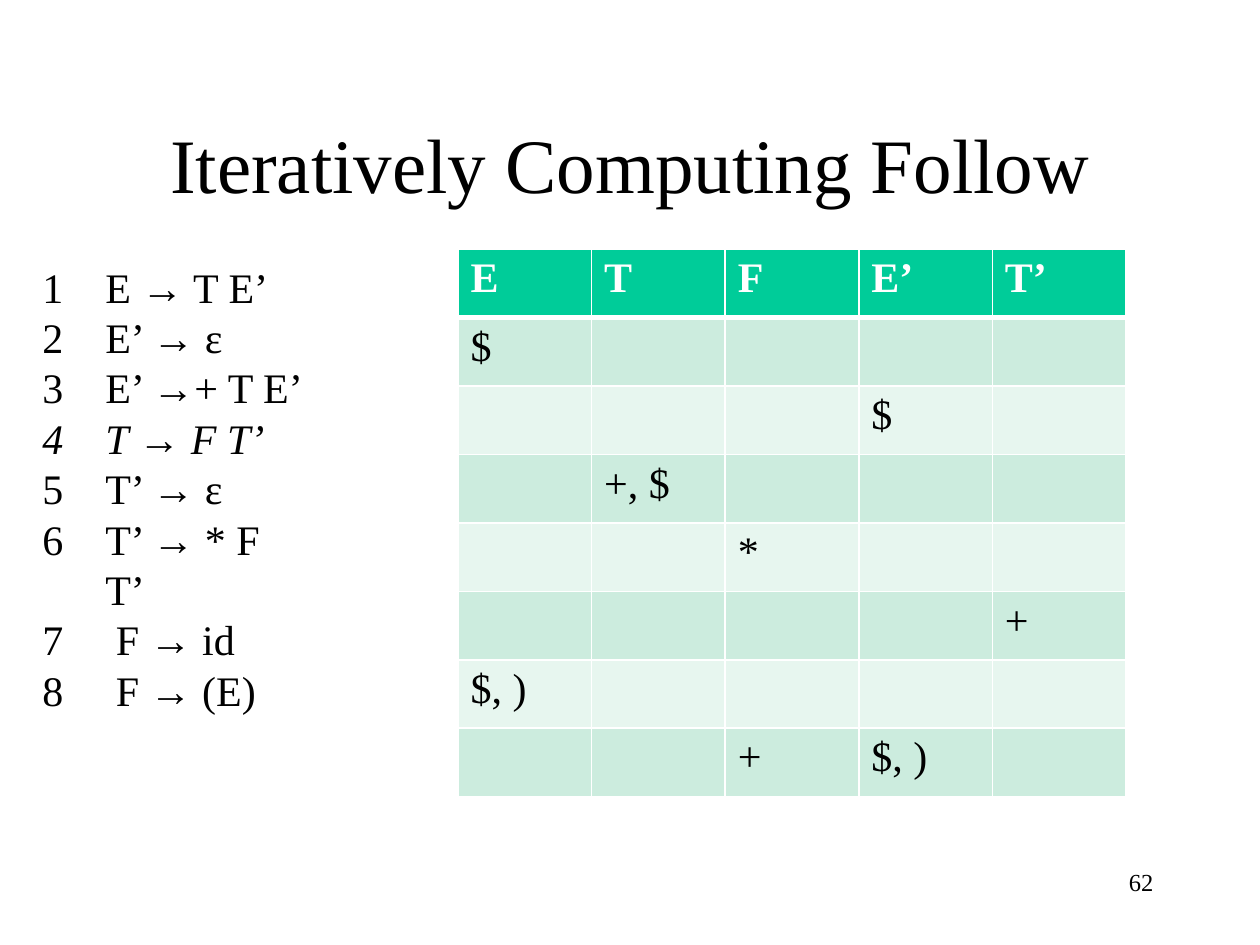
from dataclasses import dataclass

from lxml.etree import SubElement
from pptx import Presentation
from pptx.dml.color import RGBColor as Rgb
from pptx.enum.text import MSO_ANCHOR as Anchor, MSO_AUTO_SIZE as AutoSize, PP_ALIGN as Align
from pptx.oxml.ns import qn
from pptx.slide import Slide
from pptx.table import _Cell as Cell
from pptx.text.text import _Paragraph as Paragraph
from pptx.util import Emu, Pt

FONT = "Times New Roman"
COLORS = {"ink": "000000", "white": "FFFFFF", "header": "00CC99",
          "odd": "CCECDE", "even": "E7F6EF"}
SYMBOLS = ["E", "T", "F", "E’", "T’"]
STEPS = [{"E": "$"}, {"E’": "$"}, {"T": "+, $"}, {"F": "*"},
         {"T’": "+"}, {"E": "$, )"}, {"F": "+", "E’": "$, )"}]


@dataclass
class Box:
    left: int
    top: int
    width: int
    height: int


@dataclass
class Label:
    box: Box
    lines: list[str]
    size: int
    align: Align = Align.LEFT
    anchor: Anchor = Anchor.TOP


TITLE = Label(Box(95, 84, 1071, 158), ["Iteratively Computing Follow"], 44,
              Align.CENTER, Anchor.MIDDLE)
PAGE = Label(Box(903, 861, 263, 63), ["62"], 14, Align.RIGHT)
GRAMMAR = Label(Box(30, 255, 289, 420), [
    "E → T E’", "E’ → ε", "E’ →+ T E’", "T → F T’",
    "T’ → ε", "T’ → * F T’", " F → id", " F → (E)"], 24)
ITALIC_RULE = 3
FOLLOW = Box(458, 249, 668, 548)


def px(length: int) -> Emu:
    """Turn pixels into EMU."""
    return Emu(round(length * 914400 / 126))


def place(box: Box) -> tuple[Emu, Emu, Emu, Emu]:
    """Give the four lengths of a box in EMU."""
    return px(box.left), px(box.top), px(box.width), px(box.height)


def style(paragraph: Paragraph, size: int, color: str = "ink", bold: bool = False) -> None:
    """Format every run of a paragraph."""
    for run in paragraph.runs:
        run.font.name = FONT
        run.font.size = Pt(size)
        run.font.bold = bold
        run.font.color.rgb = Rgb.from_string(COLORS[color])


def draw_label(slide: Slide, label: Label) -> list[Paragraph]:
    """Draw a text box and return its paragraphs."""
    frame = slide.shapes.add_textbox(*place(label.box)).text_frame
    frame.word_wrap = True
    frame.auto_size = AutoSize.NONE
    frame.vertical_anchor = label.anchor
    frame.text = "\n".join(label.lines)
    for paragraph in frame.paragraphs:
        paragraph.alignment = label.align
        style(paragraph, label.size)
    return list(frame.paragraphs)


def number(paragraph: Paragraph) -> None:
    """Number a paragraph with a hanging indent."""
    properties = paragraph._p.get_or_add_pPr()
    properties.set("marL", str(px(63)))
    properties.set("indent", str(-px(63)))
    SubElement(properties, qn("a:buFontTx"))
    SubElement(properties, qn("a:buAutoNum"), type="arabicPlain")


def border(cell: Cell, row: int) -> None:
    """Rule a cell in white, heavier below the header."""
    widths = {"L": 1, "R": 1, "T": 3 if row == 1 else 1, "B": 3 if row == 0 else 1}
    properties = cell._tc.get_or_add_tcPr()
    for side, width in widths.items():
        line = SubElement(properties, qn(f"a:ln{side}"), w=str(Pt(width)))
        fill = SubElement(line, qn("a:solidFill"))
        SubElement(fill, qn("a:srgbClr"), val=COLORS["white"])


def draw_follow(slide: Slide, box: Box) -> None:
    """Draw the table of Follow sets, one step a row."""
    rows = [dict(zip(SYMBOLS, SYMBOLS)), *STEPS]
    table = slide.shapes.add_table(len(rows), len(SYMBOLS), *place(box)).table
    for r, entries in enumerate(rows):
        fill = "header" if r == 0 else "odd" if r % 2 else "even"
        for c, symbol in enumerate(SYMBOLS):
            cell = table.cell(r, c)
            border(cell, r)
            cell.fill.solid()
            cell.fill.fore_color.rgb = Rgb.from_string(COLORS[fill])
            if symbol in entries:
                cell.text_frame.text = entries[symbol]
                style(cell.text_frame.paragraphs[0], 24,
                      "ink" if r else "white", bold=r == 0)


def main() -> None:
    """Build and save the slide."""
    deck = Presentation()
    deck.slide_width, deck.slide_height = px(1260), px(945)
    slide = deck.slides.add_slide(deck.slide_layouts[6])
    draw_label(slide, TITLE)
    draw_label(slide, PAGE)
    rules = draw_label(slide, GRAMMAR)
    for rule in rules:
        number(rule)
    rules[ITALIC_RULE].runs[0].font.italic = True
    draw_follow(slide, FOLLOW)
    deck.save("out.pptx")


if __name__ == "__main__":
    main()
